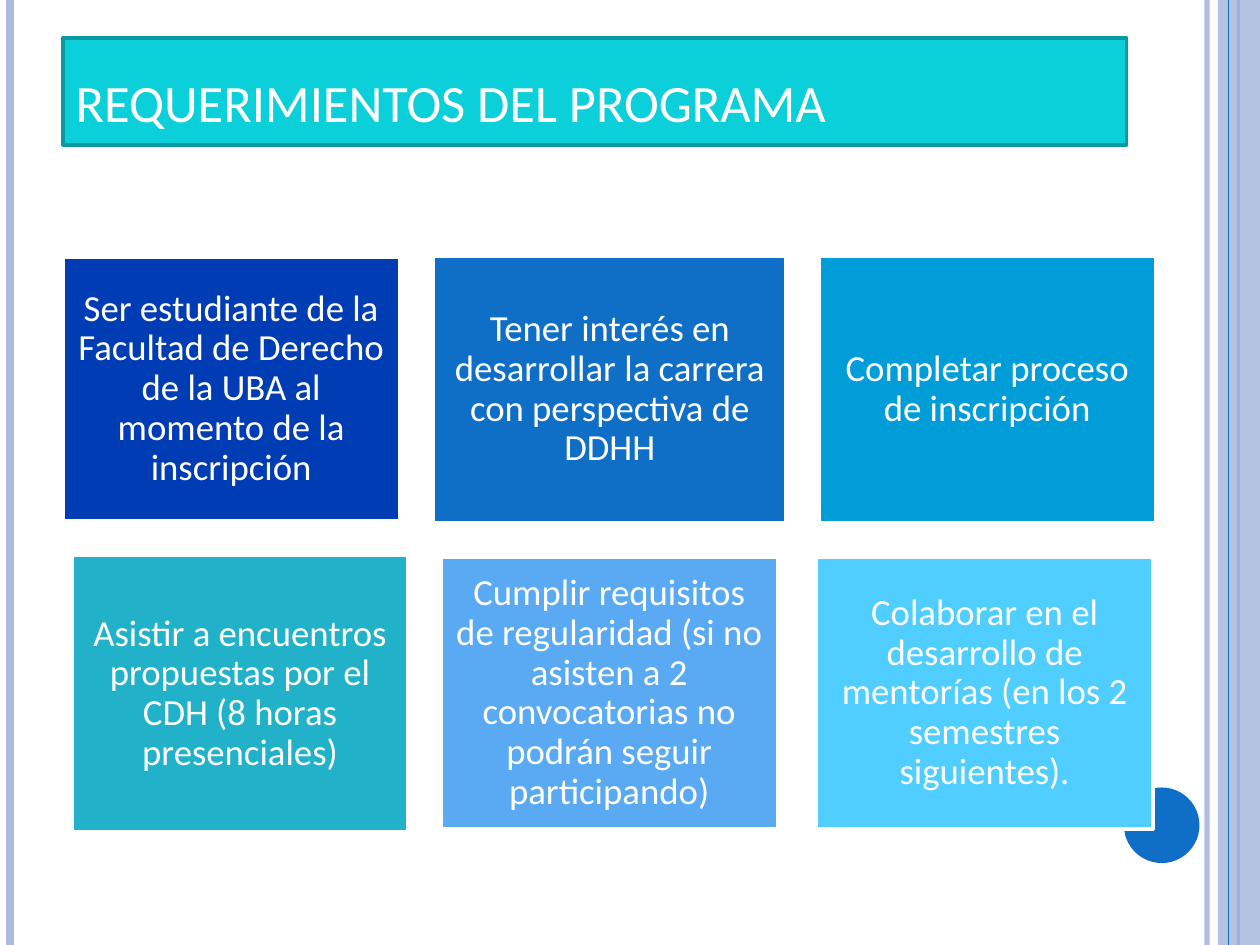
"""Build the slide listing the programme requirements as six coloured boxes."""
from lxml.etree import SubElement
from pptx import Presentation
from pptx.dml.color import RGBColor as RGB
from pptx.enum.shapes import MSO_CONNECTOR as CONN, MSO_SHAPE as SHAPE
from pptx.enum.text import MSO_ANCHOR as ANCHOR, MSO_AUTO_SIZE as AUTO, PP_ALIGN as ALIGN
from pptx.oxml.ns import qn
from pptx.util import Inches as In, Pt

C = {
    "white": "FFFFFF", "rail": "ABBBDF", "blue": "0F6FC6",
    "title": "0BD0D9", "title_edge": "089AA1", "navy": "003CB4",
    "sky": "009DD9", "teal": "21B2C9", "soft": "59AAF2", "light": "4FCEFF",
}
W, H = 10, 7.5
COL_W, ROW_H = 2.67, 2.16


def write(s, text, size=21, align=ALIGN.CENTER, anchor=ANCHOR.MIDDLE, spacing=0.9, inset=0.09):
    tf = s.text_frame
    tf.word_wrap, tf.auto_size, tf.vertical_anchor = True, AUTO.NONE, anchor
    tf.margin_left = tf.margin_right = In(inset)
    tf.margin_top = tf.margin_bottom = In(min(inset, 0.09))
    p = tf.paragraphs[0]
    p.alignment, p.line_spacing = align, spacing
    r = p.add_run()
    r.text = text
    r.font.size, r.font.name = Pt(size), "Calibri"
    r.font.color.rgb = RGB.from_string(C["white"])


def paint(s, fill=None, line=None, width=2, alpha=100):
    if fill:
        s.fill.solid()
        s.fill.fore_color.rgb = RGB.from_string(C[fill])
    if line:
        s.line.color.rgb = RGB.from_string(C[line])
        s.line.width = Pt(width)
    else:
        s.line.fill.background()
    if alpha < 100:
        color = s._element.spPr.find(".//" + qn("a:srgbClr"))
        SubElement(color, qn("a:alpha")).set("val", str(alpha * 1000))


prs = Presentation()
prs.slide_width, prs.slide_height = In(W), In(H)
slide = prs.slides.add_slide(prs.slide_layouts[5])
shapes = slide.shapes

title = shapes.title
title.left, title.top, title.width, title.height = In(0.5), In(0.3), In(8.44), In(0.85)
paint(title, "title", "title_edge")
write(title, "REQUERIMIENTOS DEL PROGRAMA", size=30, align=ALIGN.LEFT,
      anchor=ANCHOR.BOTTOM, spacing=1, inset=0.1)

rails = [(9.58, "rail", 3, 93), (0.08, "rail", 4.5, 100),
         (9.83, "blue", 1.5, 100), (9.75, "blue", 0.75, 100)]
for i, (x, color, width, alpha) in enumerate(rails):
    if i == len(rails) - 1:
        band = shapes.add_shape(SHAPE.RECTANGLE, In(W * 29 / 30), 0, In(W / 30), In(H))
        band.shadow.inherit = False
        paint(band, "rail", alpha=87)
    rail = shapes.add_connector(CONN.STRAIGHT, In(x), 0, In(x), In(H))
    paint(rail, line=color, width=width, alpha=alpha)
    SubElement(rail._element.spPr, qn("a:effectLst"))

dot = shapes.add_shape(SHAPE.OVAL, In(8.92), In(6.25), In(0.6), In(0.6))
dot.shadow.inherit = False
paint(dot, "blue")

boxes = [
    (0.5, 2.04, COL_W, 2.09, "navy",
     "Ser estudiante de la Facultad de Derecho de la UBA al momento de la inscripción"),
    (3.44, 2.03, 2.8, 2.12, "blue",
     "Tener interés en desarrollar la carrera con perspectiva de DDHH"),
    (6.5, 2.03, COL_W, 2.12, "sky", "Completar proceso de inscripción"),
    (0.57, 4.41, COL_W, 2.19, "teal",
     "Asistir a encuentros propuestas por el CDH (8 horas presenciales)"),
    (3.5, 4.42, COL_W, ROW_H, "soft",
     "Cumplir requisitos de regularidad (si no asisten a 2 convocatorias no podrán seguir participando)"),
    (6.48, 4.42, COL_W, ROW_H, "light",
     "Colaborar en el desarrollo de mentorías (en los 2 semestres siguientes)."),
]
for x, y, w, h, color, text in boxes:
    s = shapes.add_shape(SHAPE.RECTANGLE, In(x), In(y), In(w), In(h))
    s.shadow.inherit = False
    paint(s, color, "white")
    write(s, text)

prs.save("out.pptx")
